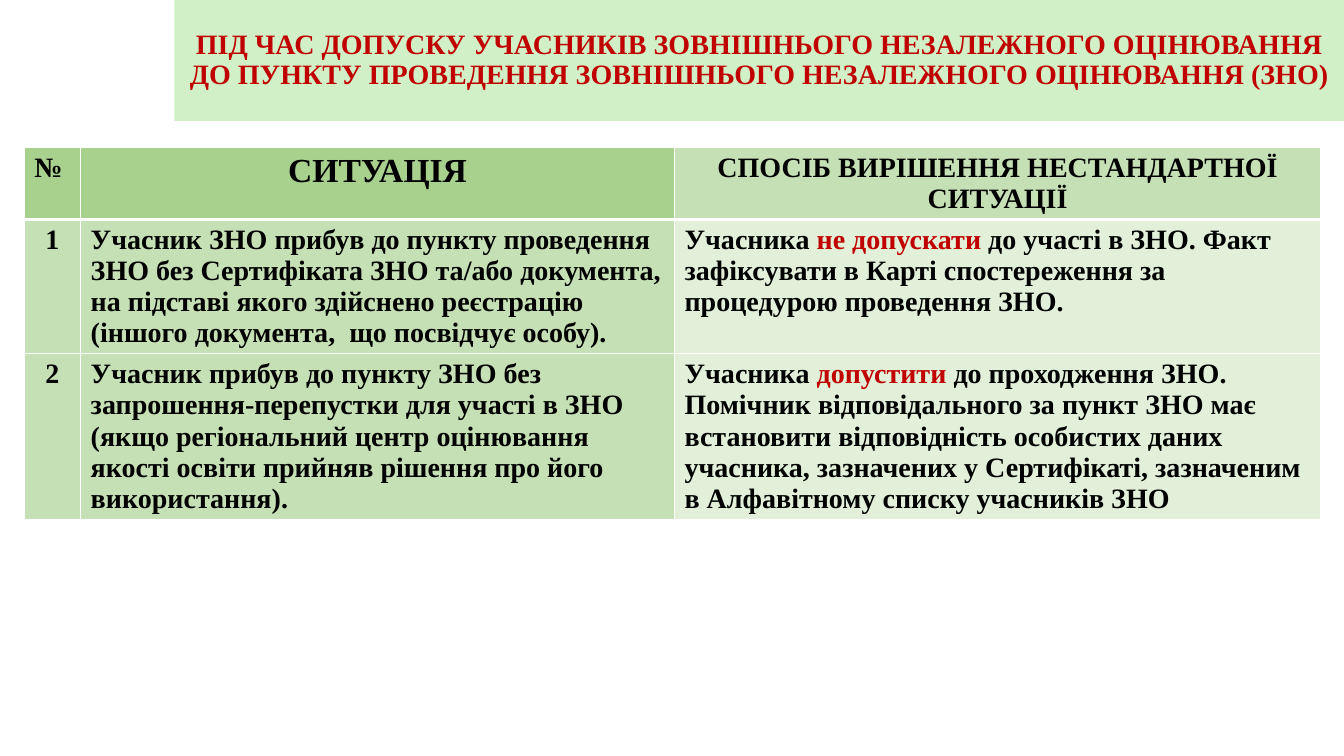
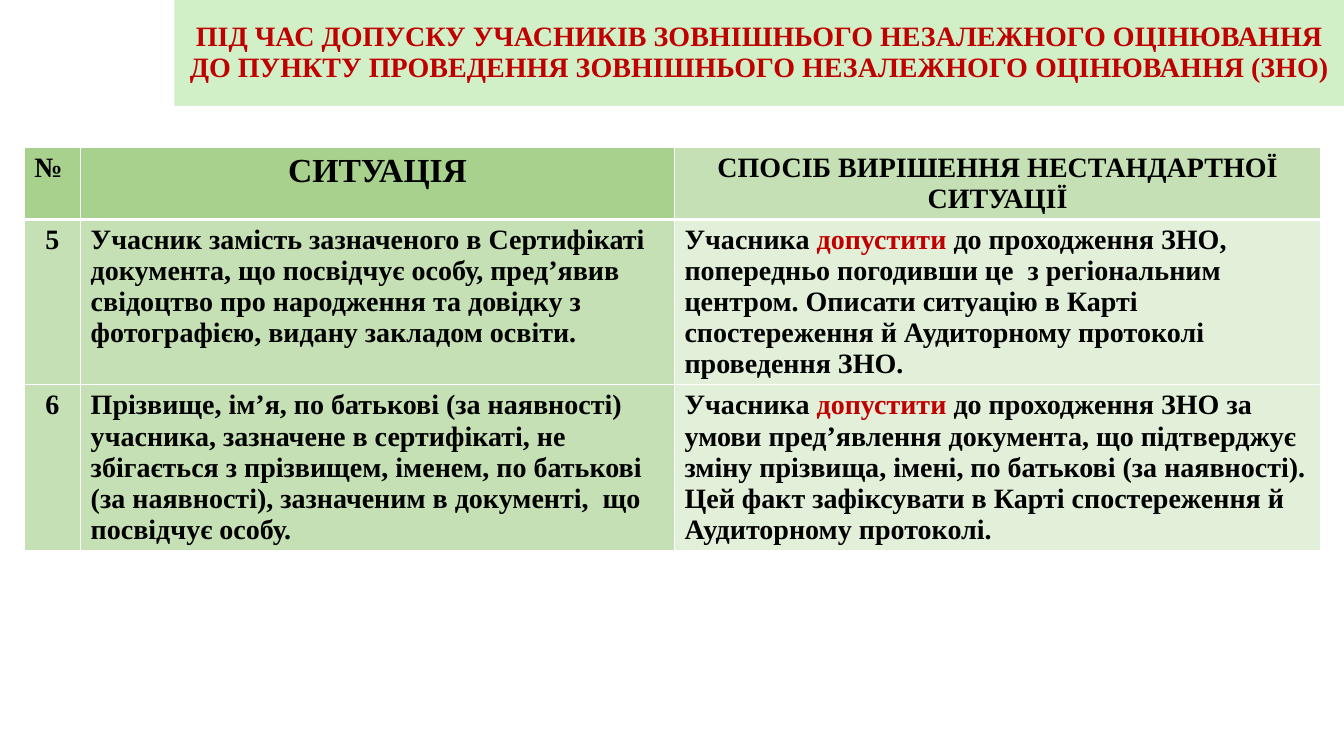
from dataclasses import dataclass

from lxml import etree
from pptx import Presentation
from pptx.dml.color import RGBColor
from pptx.enum.text import MSO_ANCHOR, MSO_AUTO_SIZE, PP_ALIGN
from pptx.oxml.ns import qn
from pptx.util import Inches, Pt

CENTER, LEFT = PP_ALIGN.CENTER, PP_ALIGN.LEFT
MIDDLE, NO_AUTOFIT = MSO_ANCHOR.MIDDLE, MSO_AUTO_SIZE.NONE

COLORS = {
    "band": "D1F0C8",
    "accent": "C00000",
    "text": "000000",
    "border": "FFFFFF",
    "dark": "A9D18E",
    "medium": "C5E0B4",
    "light": "E2F0D9",
}
FONT = "Times New Roman"
TITLE_ONLY_LAYOUT = 5
SLIDE_WIDTH, SLIDE_HEIGHT = 13.33, 7.5
BAND_LEFT = 1.73
TABLE_LEFT, TABLE_TOP = 0.24, 1.46
COLUMN_WIDTHS = (0.56, 5.89, 6.41)
ROW_HEIGHT = 0.54
THIN, THICK = 1, 3

TITLE = (
    "ПІД ЧАС ДОПУСКУ УЧАСНИКІВ ЗОВНІШНЬОГО НЕЗАЛЕЖНОГО ОЦІНЮВАННЯ "
    "ДО ПУНКТУ ПРОВЕДЕННЯ ЗОВНІШНЬОГО НЕЗАЛЕЖНОГО ОЦІНЮВАННЯ (ЗНО)"
)


@dataclass(frozen=True)
class CellStyle:
    fill: str
    align: PP_ALIGN = LEFT
    size: int = 20


@dataclass(frozen=True)
class Case:
    number: str
    situation: str
    verdict: str
    instructions: str


@dataclass(frozen=True)
class CaseSlide:
    band_height: float
    cases: tuple[Case, ...]


HEADERS = ("№", "СИТУАЦІЯ", "СПОСІБ ВИРІШЕННЯ НЕСТАНДАРТНОЇ СИТУАЦІЇ")
HEADER_STYLES = (
    CellStyle("dark"),
    CellStyle("dark", CENTER, 24),
    CellStyle("medium", CENTER),
)
CASE_STYLES = (
    CellStyle("medium", CENTER),
    CellStyle("medium"),
    CellStyle("light"),
)

SLIDES = (
    CaseSlide(1.2, (
        Case(
            "1",
            "Учасник ЗНО прибув до пункту проведення ЗНО без Сертифіката ЗНО "
            "та/або документа, на підставі якого здійснено реєстрацію "
            "(іншого документа,  що посвідчує особу).",
            "не допускати",
            " до участі в ЗНО. Факт зафіксувати в Карті спостереження "
            "за процедурою проведення ЗНО.",
        ),
        Case(
            "2",
            "Учасник прибув до пункту ЗНО без запрошення-перепустки для участі "
            "в ЗНО (якщо регіональний центр оцінювання якості освіти прийняв "
            "рішення про його використання).",
            "допустити",
            " до проходження ЗНО. Помічник відповідального за пункт ЗНО має "
            "встановити відповідність особистих даних учасника, зазначених "
            "у Сертифікаті, зазначеним в Алфавітному списку учасників ЗНО",
        ),
    )),
    CaseSlide(1.05, (
        Case(
            "5",
            "Учасник замість зазначеного в Сертифікаті документа, що посвідчує "
            "особу, пред’явив свідоцтво про народження та довідку "
            "з фотографією, видану закладом освіти.",
            "допустити",
            " до проходження ЗНО, попередньо погодивши це  з регіональним "
            "центром. Описати ситуацію в Карті спостереження й Аудиторному "
            "протоколі проведення ЗНО.",
        ),
        Case(
            "6",
            "Прізвище, ім’я, по батькові (за наявності) учасника, зазначене "
            "в сертифікаті, не збігається з прізвищем, іменем, по батькові "
            "(за наявності), зазначеним в документі,  що посвідчує особу.",
            "допустити",
            " до проходження ЗНО за умови пред’явлення документа, що "
            "підтверджує зміну прізвища, імені, по батькові (за наявності). "
            "Цей факт зафіксувати в Карті спостереження й Аудиторному "
            "протоколі.",
        ),
    )),
)


def rgb(name: str) -> RGBColor:
    return RGBColor.from_string(COLORS[name])


def format_paragraph(paragraph, size: int, color: str, align: PP_ALIGN) -> None:
    paragraph.alignment = align
    font = paragraph.font
    font.name, font.size, font.bold = FONT, Pt(size), True
    font.color.rgb = rgb(color)


def add_title_band(slide, height: float) -> None:
    band = slide.shapes.title
    band.left, band.top = Inches(BAND_LEFT), Inches(0)
    band.width, band.height = Inches(SLIDE_WIDTH - BAND_LEFT), Inches(height)
    band.fill.solid()
    band.fill.fore_color.rgb = rgb("band")
    frame = band.text_frame
    frame.text = TITLE
    frame.word_wrap, frame.auto_size = True, NO_AUTOFIT
    frame.vertical_anchor = MIDDLE
    paragraph = frame.paragraphs[0]
    paragraph.line_spacing = 0.9
    format_paragraph(paragraph, 20, "accent", CENTER)


def set_borders(cell, top: int, bottom: int) -> None:
    properties = cell._tc.get_or_add_tcPr()
    sides = {"lnL": THIN, "lnR": THIN, "lnT": top, "lnB": bottom}
    for side, width in sides.items():
        line = etree.SubElement(properties, qn(f"a:{side}"), w=str(Pt(width)))
        fill = etree.SubElement(line, qn("a:solidFill"))
        etree.SubElement(fill, qn("a:srgbClr"), val=COLORS["border"])


def fill_cell(cell, runs: tuple[str, ...], style: CellStyle) -> None:
    """Write the runs, every second one in the accent colour."""
    cell.fill.solid()
    cell.fill.fore_color.rgb = rgb(style.fill)
    paragraph = cell.text_frame.paragraphs[0]
    format_paragraph(paragraph, style.size, "text", style.align)
    for index, text in enumerate(runs):
        run = paragraph.add_run()
        run.text = text
        # Table styles outrank paragraph defaults, so runs carry the font.
        font = run.font
        font.name, font.size, font.bold = FONT, Pt(style.size), True
        font.color.rgb = rgb("accent" if index % 2 else "text")


def add_case_table(slide, cases: tuple[Case, ...]) -> None:
    rows = [(tuple((header,) for header in HEADERS), HEADER_STYLES)]
    for case in cases:
        solution = ("Учасника ", case.verdict, case.instructions)
        rows.append((((case.number,), (case.situation,), solution), CASE_STYLES))
    table = slide.shapes.add_table(
        len(rows), len(COLUMN_WIDTHS), Inches(TABLE_LEFT), Inches(TABLE_TOP),
        Inches(sum(COLUMN_WIDTHS)), Inches(ROW_HEIGHT * len(rows)),
    ).table
    for column, width in zip(table.columns, COLUMN_WIDTHS):
        column.width = Inches(width)
    for row_index, (contents, styles) in enumerate(rows):
        top = THICK if row_index == 1 else THIN
        bottom = THICK if row_index == 0 else THIN
        for column_index, (runs, style) in enumerate(zip(contents, styles)):
            cell = table.cell(row_index, column_index)
            set_borders(cell, top, bottom)
            fill_cell(cell, runs, style)


def main() -> None:
    presentation = Presentation()
    presentation.slide_width = Inches(SLIDE_WIDTH)
    presentation.slide_height = Inches(SLIDE_HEIGHT)
    layout = presentation.slide_layouts[TITLE_ONLY_LAYOUT]
    for content in SLIDES:
        slide = presentation.slides.add_slide(layout)
        add_title_band(slide, content.band_height)
        add_case_table(slide, content.cases)
    presentation.save("out.pptx")


if __name__ == "__main__":
    main()
